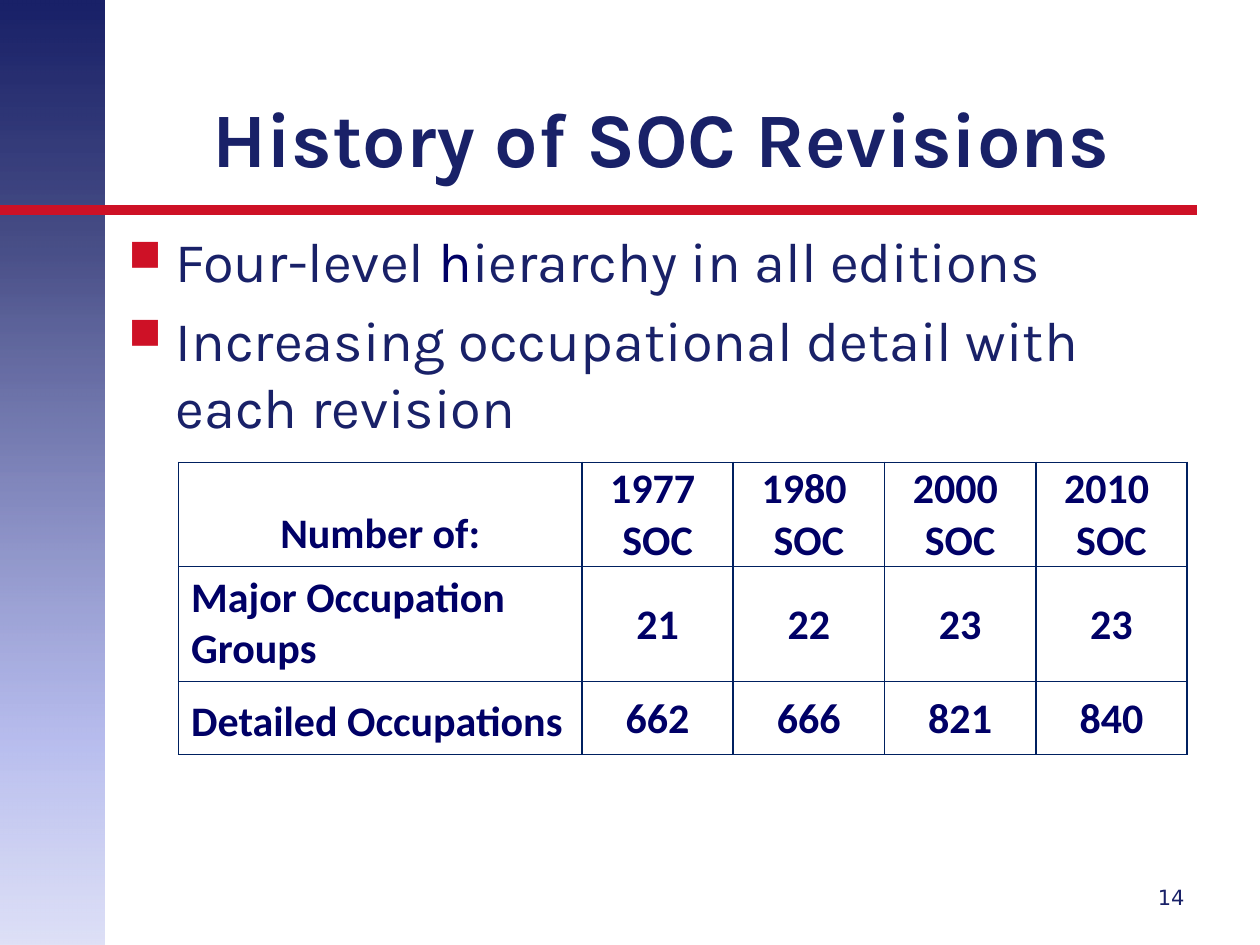
from lxml import etree
from pptx import Presentation
from pptx import util as u
from pptx.dml.color import RGBColor
from pptx.enum import shapes, text
from pptx.oxml import parse_xml

NS = 'xmlns:a="http://schemas.openxmlformats.org/drawingml/2006/main"'
NAVY, DARK, RED = "192168", "000066", "CE1126"
MID, LEFT, RIGHT = text.PP_ALIGN.CENTER, text.PP_ALIGN.LEFT, text.PP_ALIGN.RIGHT
LOW, HALF, TOP = text.MSO_ANCHOR.BOTTOM, text.MSO_ANCHOR.MIDDLE, text.MSO_ANCHOR.TOP


def rgb(code):
    return RGBColor.from_string(code)


def write(para, words, color, look):
    run = para.add_run()
    run.text = words
    run.font.color.rgb = rgb(color)
    for key, val in look.items():
        setattr(run.font, key, val)


prs = Presentation()
prs.slide_width, prs.slide_height = u.Cm(25.4), u.Cm(19.05)
slide = prs.slides.add_slide(prs.slide_layouts[6])

band = slide.shapes.add_shape(shapes.MSO_SHAPE.RECTANGLE, 0, 0, u.Cm(2.11), u.Cm(19.05))
band.shadow.inherit = False
band.line.fill.background()
band.fill.background()
stops = [(0, NAVY, 100), (26, NAVY, 79), (78, "969EE6", 68), (100, "CACEF2", 61)]
marks = "".join(
    f'<a:gs pos="{pos * 1000}"><a:srgbClr val="{code}"><a:alpha val="{alpha * 1000}"/></a:srgbClr></a:gs>'
    for pos, code, alpha in stops
)
old = band.element.spPr.find("{*}noFill")
old.getparent().replace(old, parse_xml(
    f'<a:gradFill {NS} rotWithShape="1"><a:gsLst>{marks}</a:gsLst><a:lin ang="5400000" scaled="0"/></a:gradFill>'
))

rule = slide.shapes.add_connector(
    shapes.MSO_CONNECTOR.STRAIGHT, 0, u.Cm(4.23), u.Cm(24.13), u.Cm(4.23)
)
rule.line.color.rgb = rgb(RED)
rule.line.width = u.Pt(6)
rule.element.spPr.append(parse_xml(f"<a:effectLst {NS}/>"))

big = {"name": "Karla", "size": u.Pt(44), "bold": True}
main = {"name": "Karla", "size": u.Pt(32)}
small = {"name": "DejaVu Sans", "size": u.Pt(12)}
boxes = [
    ((2.54, 0.76, 21.59, 3.05), LOW, MID, big, [[("History of SOC Revisions", NAVY)]]),
    ((2.34, 4.45, 22.02, 12.57), TOP, LEFT, main, [
        [("Four-level ", NAVY), ("h", DARK), ("ierarchy in all editions", NAVY)],
        [("Increasing occupational detail with each revision", NAVY)],
    ]),
    ((22.23, 17.58, 1.9, 1.02), HALF, RIGHT, small, [[("14", NAVY)]]),
]
for place, anchor, align, look, lines in boxes:
    frame = slide.shapes.add_textbox(*map(u.Cm, place)).text_frame
    frame.word_wrap = True
    frame.vertical_anchor = anchor
    for num, line in enumerate(lines):
        para = frame.add_paragraph() if num else frame.paragraphs[0]
        para.alignment = align
        for words, color in line:
            write(para, words, color, look)
        if look is main:
            para.space_before = u.Pt(6.4)
            props = para._p.get_or_add_pPr()
            props.set("marL", str(u.Cm(0.95)))
            props.set("indent", str(-u.Cm(0.95)))
            for part in (
                f'<a:buClr {NS}><a:srgbClr val="{RED}"/></a:buClr>',
                f'<a:buSzPct {NS} val="80000"/>',
                f'<a:buChar {NS} char="■"/>',
            ):
                props.append(parse_xml(part))

rows = [
    ["Number of:"] + [f"{year} \nSOC" for year in (1977, 1980, 2000, 2010)],
    ["Major Occupation Groups", "21", "22", "23", "23"],
    ["Detailed Occupations", "662", "666", "821", "840"],
]
wide = [8.13] + [3.05] * 4
high = [2.1, 2.32, 1.47]
table = slide.shapes.add_table(
    3, 5, u.Cm(3.6), u.Cm(9.32), u.Cm(sum(wide)), u.Cm(sum(high))
).table
table.first_row = table.horz_banding = False
for col, size in zip(table.columns, wide):
    col.width = u.Cm(size)
for row, size in zip(table.rows, high):
    row.height = u.Cm(size)

bold = {"name": "Calibri", "size": u.Pt(24), "bold": True}
tight = {"margin_left": u.Cm(0.03), "margin_top": u.Cm(0.03),
         "margin_right": u.Cm(0.03), "margin_bottom": 0, "vertical_anchor": HALF}
for r, row in enumerate(rows):
    for c, words in enumerate(row):
        cell = table.cell(r, c)
        cell.fill.background()
        for key, val in (tight if c else {"vertical_anchor": LOW}).items():
            setattr(cell, key, val)
        for num, line in enumerate(words.split("\n")):
            frame = cell.text_frame
            para = frame.add_paragraph() if num else frame.paragraphs[0]
            para.alignment = MID if c or r == 0 else LEFT
            write(para, line, DARK, bold)
        props = cell._tc.get_or_add_tcPr()
        for spot, side in enumerate("LRTB"):
            props.insert(spot, parse_xml(
                f'<a:ln{side} {NS} w="{u.Pt(1)}"><a:solidFill><a:srgbClr val="002060"/></a:solidFill></a:ln{side}>'
            ))

prs.save("out.pptx")
